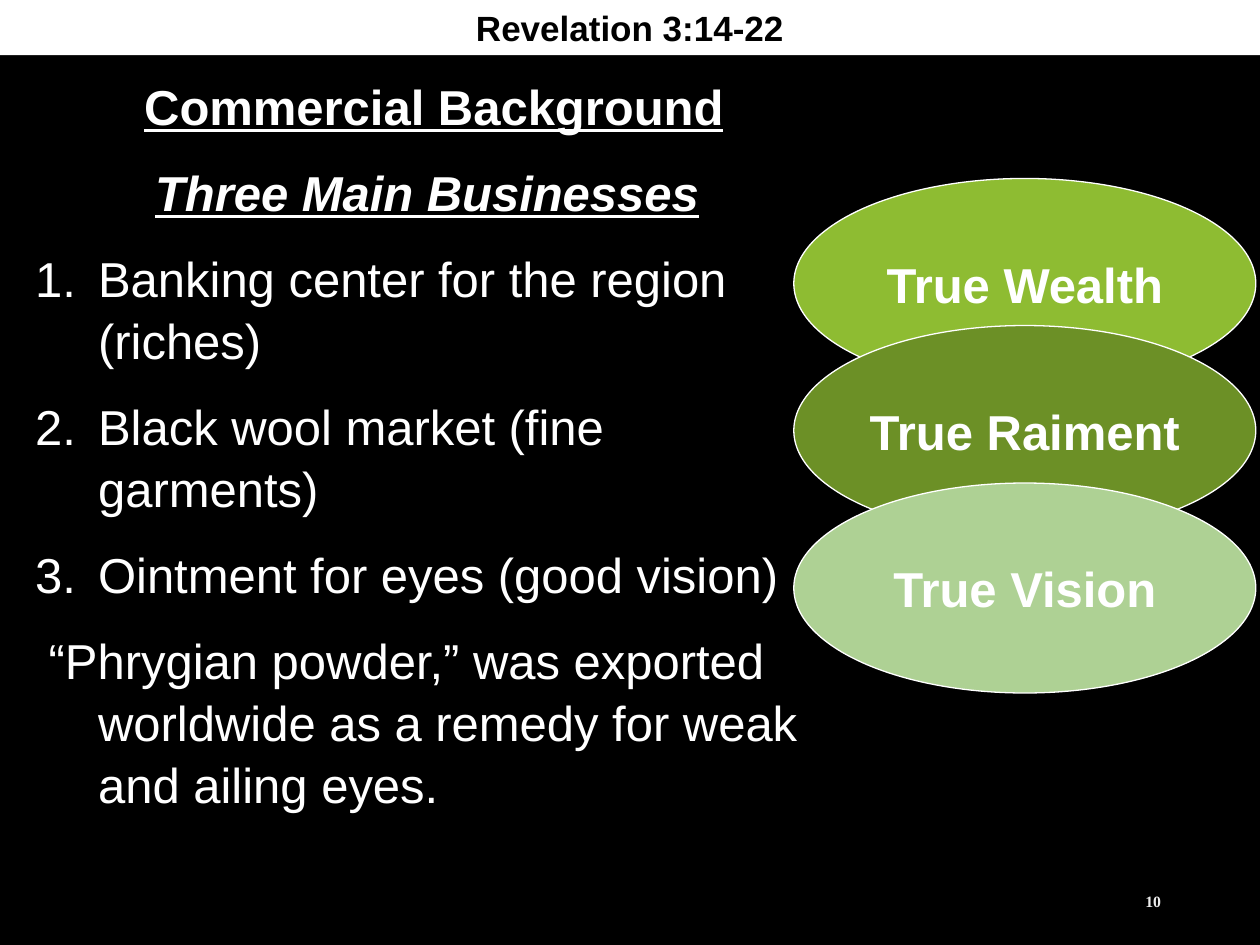
"""Build the Revelation 3:14-22 slide on the commercial background of Laodicea."""
from lxml.etree import SubElement
from pptx import Presentation
from pptx.dml.color import RGBColor
from pptx.enum.shapes import MSO_SHAPE
from pptx.enum.text import MSO_ANCHOR, PP_ALIGN
from pptx.oxml.ns import qn
from pptx.util import Pt

BLACK = RGBColor(0x00, 0x00, 0x00)
WHITE = RGBColor(0xFF, 0xFF, 0xFF)
SILVER = RGBColor(0xED, 0xED, 0xED)
LIME = RGBColor(0x8E, 0xBC, 0x32)
OLIVE = RGBColor(0x6C, 0x90, 0x26)
PALE = RGBColor(0xAE, 0xD1, 0x94)


def add_run(p, text, color, **fmt):
    r = p.add_run()
    r.text = text
    r.font.color.rgb = color
    for name, value in {"name": "Arial", "size": Pt(28), **fmt}.items():
        setattr(r.font, name, value)


def add_shape(kind, box, fill, text, color, size):
    sp = s.shapes.add_shape(kind, *map(Pt, box))
    sp.shadow.inherit = False
    sp.fill.solid()
    sp.fill.fore_color.rgb = fill
    sp.line.fill.background()
    tf = sp.text_frame
    tf.vertical_anchor = MSO_ANCHOR.MIDDLE
    tf.word_wrap = False
    tf.paragraphs[0].alignment = PP_ALIGN.CENTER
    add_run(tf.paragraphs[0], text, color, size=Pt(size), bold=True)
    return sp


prs = Presentation()
prs.slide_width, prs.slide_height = Pt(720), Pt(540)
s = prs.slides.add_slide(prs.slide_layouts[6])
s.background.fill.solid()
s.background.fill.fore_color.rgb = BLACK

heading = {"bold": True, "underline": True}
lines = [
    ("Commercial Background", "heading", heading),
    ("Three Main Businesses", "heading", {**heading, "italic": True}),
    ("Banking center for the region (riches)", "number", {}),
    ("Black wool market (fine garments)", "number", {}),
    ("Ointment for eyes (good vision)", "number", {}),
    (" “Phrygian powder,” was exported worldwide as a remedy for weak "
     "and ailing eyes.", "plain", {}),
]
tf = s.shapes.add_textbox(Pt(13), Pt(38.2), Pt(462), Pt(431)).text_frame
tf.word_wrap = True
for i, (text, role, fmt) in enumerate(lines):
    p = tf.add_paragraph() if i else tf.paragraphs[0]
    p.alignment = PP_ALIGN.CENTER if role == "heading" else PP_ALIGN.LEFT
    p.line_spacing = 1.05
    p.space_before = Pt(14 if i else 0)
    pPr = p._p.get_or_add_pPr()
    pPr.set("marL", str(Pt(36)))
    pPr.set("indent", str(Pt(-36)))
    if role == "number":
        SubElement(pPr, qn("a:buFont"), typeface="Arial")
        SubElement(pPr, qn("a:buAutoNum"), type="arabicPeriod")
    else:
        SubElement(pPr, qn("a:buNone"))
    if i == 0:
        add_run(p, " ", WHITE)
    add_run(p, text, WHITE, **fmt)

ovals = [("True Wealth", 102, LIME), ("True Raiment", 186, OLIVE), ("True Vision", 276, PALE)]
for text, top, fill in ovals:
    sp = add_shape(MSO_SHAPE.OVAL, (453.6, top, 264, 120), fill, text, WHITE, 28)
    sp.line.color.rgb = WHITE
    sp.line.width = Pt(0.75)

add_shape(MSO_SHAPE.RECTANGLE, (0, 0, 720, 31.5), WHITE, "Revelation 3:14-22", BLACK, 20)

tf = s.shapes.add_textbox(Pt(508.5), Pt(500.4), Pt(162), Pt(28.8)).text_frame
tf.word_wrap = True
tf.vertical_anchor = MSO_ANCHOR.MIDDLE
tf.paragraphs[0].alignment = PP_ALIGN.RIGHT
add_run(tf.paragraphs[0], "10", SILVER, name="Times New Roman", size=Pt(9), bold=True)

prs.save("out.pptx")
